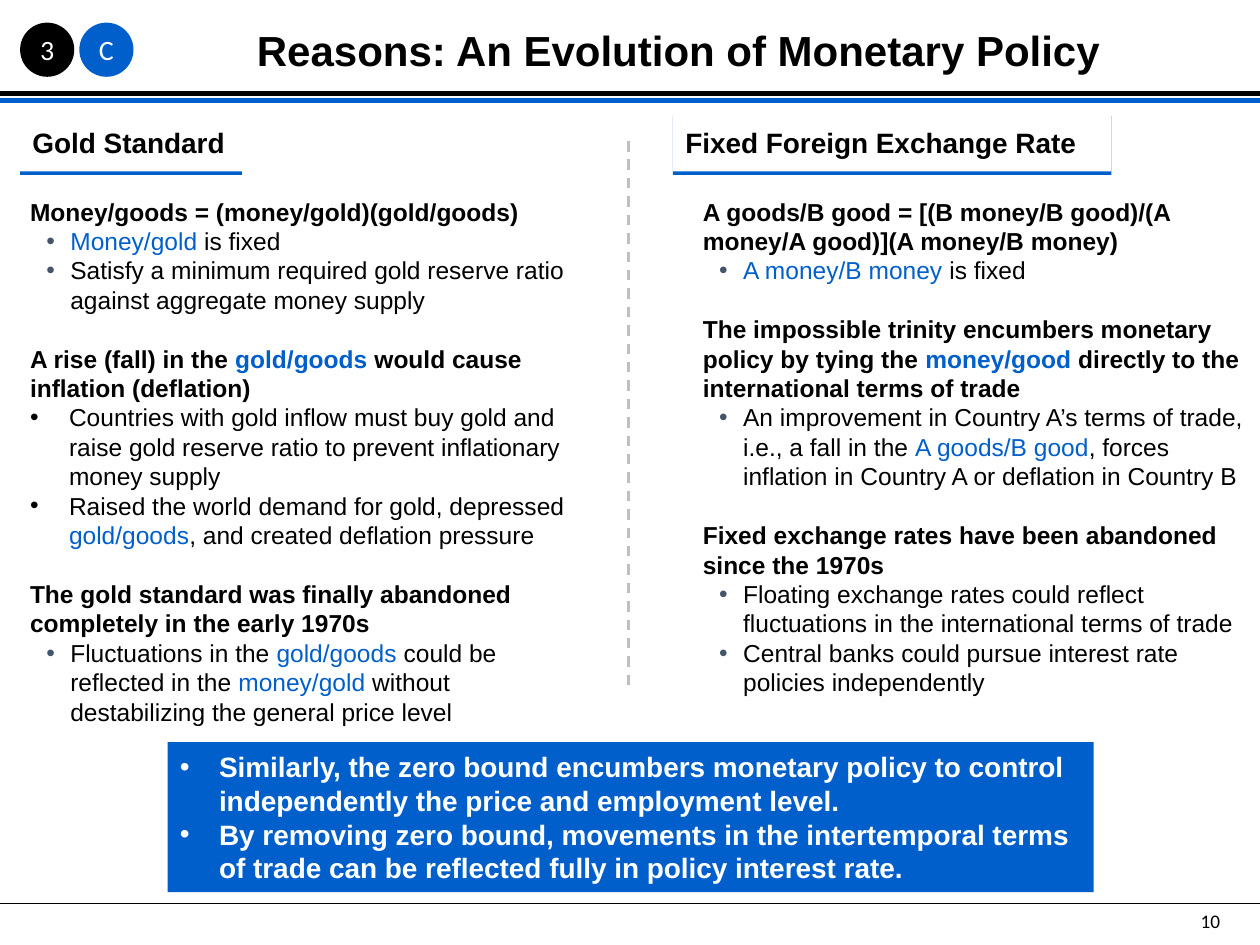
from lxml import etree
from pptx import Presentation
from pptx import util as u
from pptx.dml.color import RGBColor
from pptx.enum import dml, shapes, text
from pptx.oxml import ns

PX = 9144  # 100 px to the inch
BLACK = RGBColor(0x00, 0x00, 0x00)
WHITE = RGBColor(0xFF, 0xFF, 0xFF)
BLUE = RGBColor(0x00, 0x5F, 0xCA)
GREY = RGBColor(0xBF, 0xBF, 0xBF)
SLATE = RGBColor(0x44, 0x54, 0x6A)

# Bullet styles: level, left margin, hanging indent, bullet colour
BULLETS = {"sub": (1, 32, 19, SLATE), "point": (0, 31, 31, None)}


def add_box(left, top, width, height, fill=None, kind=shapes.MSO_SHAPE.RECTANGLE,
            inset=10, anchor=text.MSO_ANCHOR.TOP):
    """Add a filled shape, or a text box when there is no fill."""
    place = [n * PX for n in (left, top, width, height)]
    if fill is None:
        box = page.shapes.add_textbox(*place)
    else:
        box = page.shapes.add_shape(kind, *place)
        box.shadow.inherit = False
        box.fill.solid()
        box.fill.fore_color.rgb = fill
        box.line.fill.background()
    frame = box.text_frame
    frame.word_wrap = True
    frame.vertical_anchor = anchor
    frame.margin_left = frame.margin_right = inset * PX
    frame.margin_top = frame.margin_bottom = min(inset, 5) * PX
    return box


def write(box, paras, size, color=BLACK, bold=False, font="Arial",
          align=text.PP_ALIGN.LEFT):
    """Write (style, words) paragraphs; words between bars are blue, heads are bold."""
    frame = box.text_frame
    for i, (style, words) in enumerate(paras):
        para = frame.add_paragraph() if i else frame.paragraphs[0]
        para.alignment = align
        if len(paras) > 1:
            para.line_spacing = u.Pt(size * 1.2)
        if style == "head" and i:
            para.space_before = u.Pt(size * 1.2)
        for j, part in enumerate(words.split("|")):
            if not part:
                continue
            span = para.add_run()
            span.text = part
            span.font.name = font
            span.font.size = u.Pt(size)
            span.font.bold = bold or style == "head"
            span.font.color.rgb = BLUE if j % 2 else color
        if style in BULLETS:
            para.level, margin, hang, dot_color = BULLETS[style]
            props = para._p.get_or_add_pPr()
            props.set("marL", str(margin * PX))
            props.set("indent", str(-hang * PX))
            if dot_color is not None:
                dot = etree.SubElement(props, ns.qn("a:buClr"))
                etree.SubElement(dot, ns.qn("a:srgbClr"), val=str(dot_color))
            etree.SubElement(props, ns.qn("a:buFont"), typeface="Arial")
            etree.SubElement(props, ns.qn("a:buChar"), char="•")


deck = Presentation()
deck.slide_width, deck.slide_height = 1000 * PX, 750 * PX
page = deck.slides.add_slide(deck.slide_layouts[6])

# Rules across the page and the dashed divider between the columns
for x1, y1, x2, y2, color, weight, dash in [
    (0, 717, 1000, 717, BLACK, 1, None),
    (0, 80, 1000, 80, BLUE, 3, None),
    (0, 74, 1000, 74, BLACK, 3, None),
    (499, 112, 499, 547, GREY, 1.5, dml.MSO_LINE.DASH),
]:
    rule = page.shapes.add_connector(shapes.MSO_CONNECTOR.STRAIGHT,
                                     x1 * PX, y1 * PX, x2 * PX, y2 * PX)
    rule.line.color.rgb = color
    rule.line.width = u.Pt(weight)
    if dash:
        rule.line.dash_style = dash
    etree.SubElement(rule._element.spPr, ns.qn("a:effectLst"))

page_number = add_box(943, 717, 43, 29)
write(page_number, [("plain", "10")], 11, font="Calibri")

title = add_box(140, 13, 797, 51, inset=0, anchor=text.MSO_ANCHOR.BOTTOM)
title.text_frame.margin_top = title.text_frame.margin_bottom = 5 * PX
write(title, [("head", "Reasons: An Evolution of Monetary Policy")], 24,
      align=text.PP_ALIGN.CENTER)

# Section badges
for left, label, fill in [(16, "3", BLACK), (63, "C", BLUE)]:
    badge = add_box(left, 18, 43, 43, fill, shapes.MSO_SHAPE.OVAL, 0,
                    text.MSO_ANCHOR.MIDDLE)
    write(badge, [("plain", label)], 16, WHITE, font="Calibri",
          align=text.PP_ALIGN.CENTER)

# Column headings, each underlined by a hard blue shadow
for left, width, label in [(16, 176, "Gold Standard"),
                           (534, 348, "Fixed Foreign Exchange Rate")]:
    heading = add_box(left, 89, width, 47, WHITE, anchor=text.MSO_ANCHOR.BOTTOM)
    heading.text_frame.margin_top = heading.text_frame.margin_bottom = 10 * PX
    write(heading, [("head", label)], 16)
    effects = heading._element.spPr.find(ns.qn("a:effectLst"))
    shadow = etree.SubElement(effects, ns.qn("a:outerShdw"), blurRad="0",
                              dist=str(u.Pt(2)), dir="5400000", algn="t",
                              rotWithShape="0")
    etree.SubElement(shadow, ns.qn("a:srgbClr"), val=str(BLUE))

gold_standard = [
    ("head", "Money/goods = (money/gold)(gold/goods)"),
    ("sub", "|Money/gold |is fixed"),
    ("sub", "Satisfy a minimum required gold reserve ratio against aggregate money supply"),
    ("head", "A rise (fall) in the |gold/goods |would cause inflation (deflation)"),
    ("point", "Countries with gold inflow must buy gold and raise gold reserve ratio "
              "to prevent inflationary money supply"),
    ("point", "Raised the world demand for gold, depressed |gold/goods|, "
              "and created deflation pressure"),
    ("head", "The gold standard was finally abandoned completely in the early 1970s"),
    ("sub", "Fluctuations in the |gold/goods |could be reflected in the |money/gold |"
            "without destabilizing the general price level"),
]
fixed_rate = [
    ("head", "A goods/B good = [(B money/B good)/(A money/A good)](A money/B money)"),
    ("sub", "|A money/B money |is fixed"),
    ("head", "The impossible trinity encumbers monetary policy by tying the |money/good |"
             "directly to the international terms of trade"),
    ("sub", "An improvement in Country A’s terms of trade, i.e., a fall in the "
            "|A goods/B good|, forces inflation in Country A or deflation in Country B"),
    ("head", "Fixed exchange rates have been abandoned since the 1970s"),
    ("sub", "Floating exchange rates could reflect fluctuations in the "
            "international terms of trade"),
    ("sub", "Central banks could pursue interest rate policies independently"),
]
for left, width, height, paras in [(14, 464, 432, gold_standard),
                                   (548, 450, 409, fixed_rate)]:
    column = add_box(left, 146, width, height)
    column.text_frame.margin_top = column.text_frame.margin_bottom = 10 * PX
    write(column, paras, 14)

conclusion = add_box(133, 589, 735, 119, BLUE, anchor=text.MSO_ANCHOR.MIDDLE)
write(conclusion, [
    ("point", "Similarly, the zero bound encumbers monetary policy to control "
              "independently the price and employment level."),
    ("point", "By removing zero bound, movements in the intertemporal terms of trade "
              "can be reflected fully in policy interest rate."),
], 16, WHITE, bold=True)

deck.save("out.pptx")
